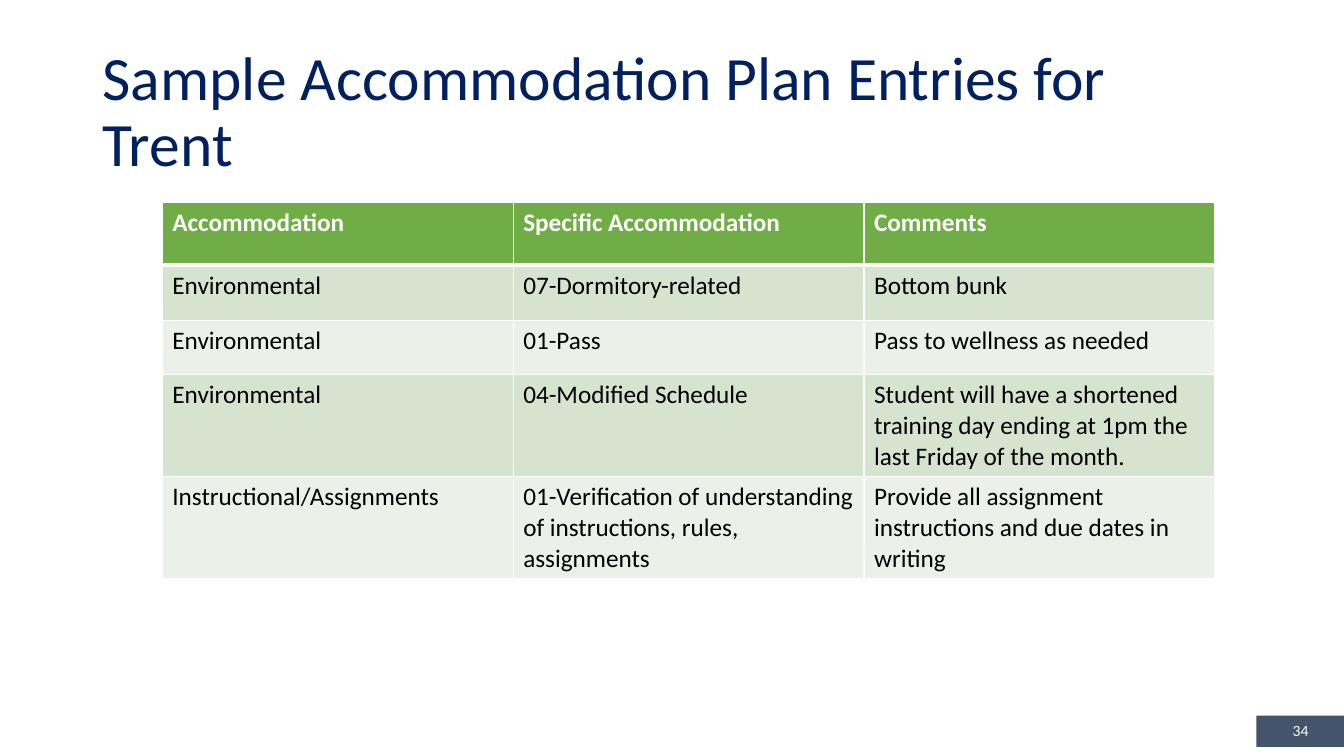
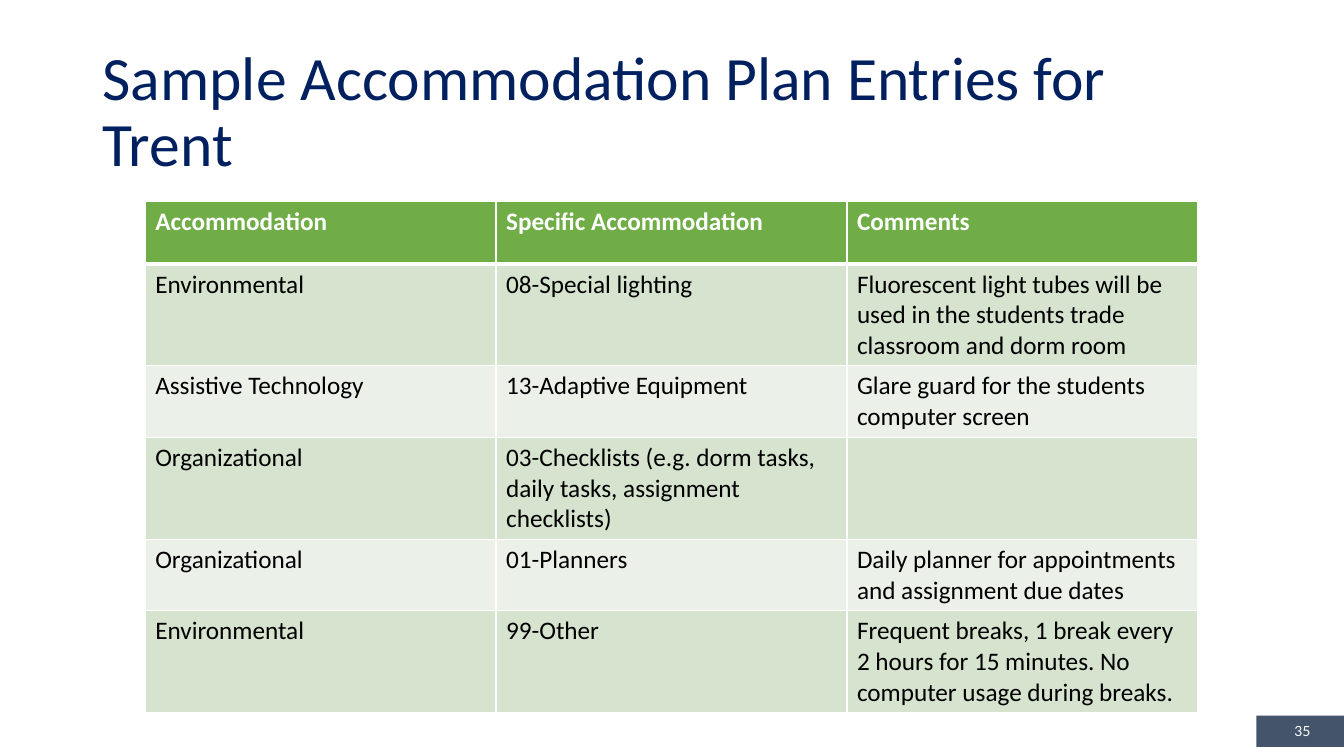
from lxml.etree import SubElement
from pptx import Presentation
from pptx.dml.color import RGBColor
from pptx.enum.shapes import MSO_SHAPE
from pptx.enum.text import MSO_ANCHOR, PP_ALIGN
from pptx.oxml.ns import qn
from pptx.util import Inches, Pt

COLORS = {
    "title": "002060",
    "page_band": "44546A",
    "header": "70AD47",
    "odd_row": "D5E3CF",
    "even_row": "EBF1E9",
    "white": "FFFFFF",
    "body": "000000",
}
TITLE = "Sample Accommodation Plan Entries for Trent"
TITLE_BOX = (0.92, 0.4, 11.5, 1.45)
PAGE_BOX = (12.46, 7.1, 0.88, 0.31)
COLUMN_WIDTH = 3.48
HEADINGS = ("Accommodation", "Specific Accommodation", "Comments")

PLANS = [
    {
        "page": "34",
        "origin": (1.61, 2.01),
        "heights": (0.62, 0.55, 0.54, 1.01, 1.01),
        "entries": [
            ("Environmental", "07-Dormitory-related", "Bottom bunk"),
            ("Environmental", "01-Pass", "Pass to wellness as needed"),
            ("Environmental", "04-Modified Schedule",
             "Student will have a shortened training day ending at 1pm the last Friday of the month."),
            ("Instructional/Assignments",
             "01-Verification of understanding of instructions, rules, assignments",
             "Provide all assignment instructions and due dates in writing"),
        ],
    },
    {
        "page": " 35",
        "origin": (1.44, 2),
        "heights": (0.62, 1.01, 0.71, 1.01, 0.71, 1.01),
        "entries": [
            ("Environmental", "08-Special lighting",
             "Fluorescent light tubes will be used in the students trade classroom and dorm room"),
            ("Assistive Technology", "13-Adaptive Equipment",
             "Glare guard for the students computer screen"),
            ("Organizational",
             "03-Checklists (e.g. dorm tasks, daily tasks, assignment checklists)", ""),
            ("Organizational", "01-Planners",
             "Daily planner for appointments and assignment due dates"),
            ("Environmental", "99-Other",
             "Frequent breaks, 1 break every 2 hours for 15 minutes. No computer usage during breaks."),
        ],
    },
]


def rgb(name):
    """Return the named palette colour."""
    return RGBColor.from_string(COLORS[name])


def style_text(paragraph, size, color, font="Calibri", bold=False):
    """Format the paragraph and its runs alike."""
    for part in (paragraph, *paragraph.runs):
        part.font.size = Pt(size)
        part.font.name = font
        part.font.bold = bold
        part.font.color.rgb = rgb(color)


def add_title(slide, box):
    """Place the slide title in the box."""
    title = slide.shapes.add_textbox(*map(Inches, box))
    frame = title.text_frame
    frame.word_wrap = True
    frame.vertical_anchor = MSO_ANCHOR.MIDDLE
    frame.text = TITLE
    frame.paragraphs[0].line_spacing = 0.9
    style_text(frame.paragraphs[0], 44, "title")


def add_page_number(slide, box, number):
    """Place the page number on its band."""
    band = slide.shapes.add_shape(MSO_SHAPE.RECTANGLE, *map(Inches, box))
    band.shadow.inherit = False
    band.fill.solid()
    band.fill.fore_color.rgb = rgb("page_band")
    band.line.fill.background()
    frame = band.text_frame
    frame.vertical_anchor = MSO_ANCHOR.MIDDLE
    frame.text = number
    frame.paragraphs[0].alignment = PP_ALIGN.CENTER
    style_text(frame.paragraphs[0], 10, "white", font="Lato")


def add_borders(cell, top, bottom):
    """Draw white borders around a cell, one point wide at the sides."""
    properties = cell._tc.get_or_add_tcPr()
    for side, width in (("L", 1), ("R", 1), ("T", top), ("B", bottom)):
        border = SubElement(properties, qn(f"a:ln{side}"), w=str(Pt(width)))
        fill = SubElement(border, qn("a:solidFill"))
        SubElement(fill, qn("a:srgbClr"), val=COLORS["white"])


def fill_cell(cell, text, row):
    """Write and style one cell according to its row."""
    is_header = row == 0
    add_borders(cell, top=3 if row == 1 else 1, bottom=3 if is_header else 1)
    cell.fill.solid()
    band = "header" if is_header else "odd_row" if row % 2 else "even_row"
    cell.fill.fore_color.rgb = rgb(band)
    cell.text = text
    style_text(cell.text_frame.paragraphs[0], 18,
               "white" if is_header else "body", bold=is_header)


def add_plan_table(slide, origin, heights, entries):
    """Place the accommodation table with its top left corner at the origin."""
    rows = [HEADINGS, *entries]
    size = (COLUMN_WIDTH * len(HEADINGS), sum(heights))
    plan = slide.shapes.add_table(
        len(rows), len(HEADINGS), *map(Inches, (*origin, *size))).table
    for column in plan.columns:
        column.width = Inches(COLUMN_WIDTH)
    for row, (height, texts) in enumerate(zip(heights, rows)):
        plan.rows[row].height = Inches(height)
        for column, text in enumerate(texts):
            fill_cell(plan.cell(row, column), text, row)


def add_plan_slide(deck, plan):
    """Add one slide of accommodation plan entries."""
    slide = deck.slides.add_slide(deck.slide_layouts[6])
    add_title(slide, TITLE_BOX)
    add_page_number(slide, PAGE_BOX, plan["page"])
    add_plan_table(slide, plan["origin"], plan["heights"], plan["entries"])


def main():
    """Build and save the deck."""
    deck = Presentation()
    deck.slide_width = Inches(13.33)
    deck.slide_height = Inches(7.5)
    for plan in PLANS:
        add_plan_slide(deck, plan)
    deck.save("out.pptx")


if __name__ == "__main__":
    main()
